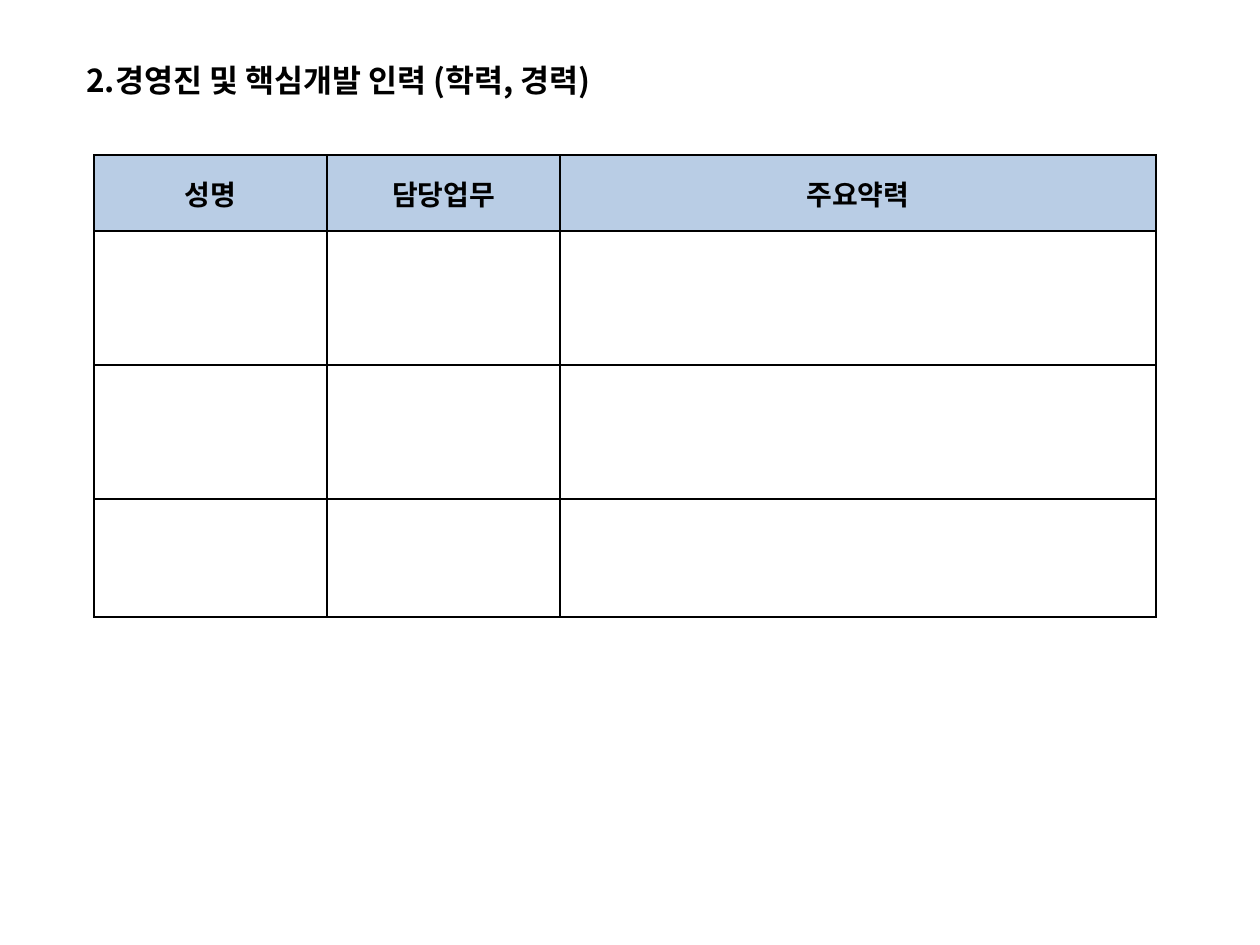
import dataclasses

import lxml.etree
import pptx
import pptx.dml.color
import pptx.enum.text
import pptx.oxml.ns
import pptx.util

EMU_PER_PX = 914400 / 126


@dataclasses.dataclass(frozen=True)
class Theme:
    font: str = "Noto Sans CJK KR"
    ink: str = "000000"
    header_fill: str = "B9CDE5"
    title_size: int = 18
    header_size: int = 16
    border_width: int = 1


THEME = Theme()
ALIGN = pptx.enum.text.PP_ALIGN
HEADERS = ["성명", "담당업무", "주요약력"]
COLUMN_WIDTHS = [233, 233, 596]
ROW_HEIGHTS = [76, 134, 134, 118]


def px(length):
    return pptx.util.Emu(round(length * EMU_PER_PX))


def color(value):
    return pptx.dml.color.RGBColor.from_string(value)


def write_text(frame, text, size, bold=True, align=ALIGN.LEFT):
    para = frame.paragraphs[0]
    para.alignment = align
    span = para.add_run()
    span.text = text
    span.font.name = THEME.font
    span.font.size = pptx.util.Pt(size)
    span.font.bold = bold
    span.font.color.rgb = color(THEME.ink)
    east_asian = lxml.etree.SubElement(
        span.font._element, pptx.oxml.ns.qn("a:ea"))
    east_asian.set("typeface", THEME.font)


def add_title(page, text, left, top, width, height):
    box = page.shapes.add_textbox(px(left), px(top), px(width), px(height))
    box.text_frame.word_wrap = True
    box.text_frame.auto_size = pptx.enum.text.MSO_AUTO_SIZE.SHAPE_TO_FIT_TEXT
    write_text(box.text_frame, text, size=THEME.title_size)


def add_borders(cell):
    qn = pptx.oxml.ns.qn
    properties = cell._tc.get_or_add_tcPr()
    for side in ("a:lnL", "a:lnR", "a:lnT", "a:lnB"):
        line = lxml.etree.SubElement(properties, qn(side))
        line.set("w", str(pptx.util.Pt(THEME.border_width)))
        fill = lxml.etree.SubElement(line, qn("a:solidFill"))
        lxml.etree.SubElement(fill, qn("a:srgbClr")).set("val", THEME.ink)


def add_staff_table(page, left, top):
    frame = page.shapes.add_table(
        len(ROW_HEIGHTS), len(COLUMN_WIDTHS), px(left), px(top),
        px(sum(COLUMN_WIDTHS)), px(sum(ROW_HEIGHTS)))
    table = frame.table
    table.first_row = False
    table.horz_banding = False
    for column, width in zip(table.columns, COLUMN_WIDTHS):
        column.width = px(width)
    for row, height in zip(table.rows, ROW_HEIGHTS):
        row.height = px(height)
    for cell in table.iter_cells():
        add_borders(cell)
        cell.fill.background()
    for cell, header in zip(table.rows[0].cells, HEADERS):
        cell.fill.solid()
        cell.fill.fore_color.rgb = color(THEME.header_fill)
        cell.vertical_anchor = pptx.enum.text.MSO_ANCHOR.MIDDLE
        write_text(cell.text_frame, header, size=THEME.header_size,
                   align=ALIGN.CENTER)


def main():
    deck = pptx.Presentation()
    deck.slide_width = px(1260)
    deck.slide_height = px(945)
    page = deck.slides.add_slide(deck.slide_layouts[6])
    add_title(page, "2.경영진 및 핵심개발 인력 (학력, 경력)",
              left=74, top=55, width=824, height=50)
    add_staff_table(page, left=94, top=155)
    deck.save("out.pptx")


if __name__ == "__main__":
    main()
